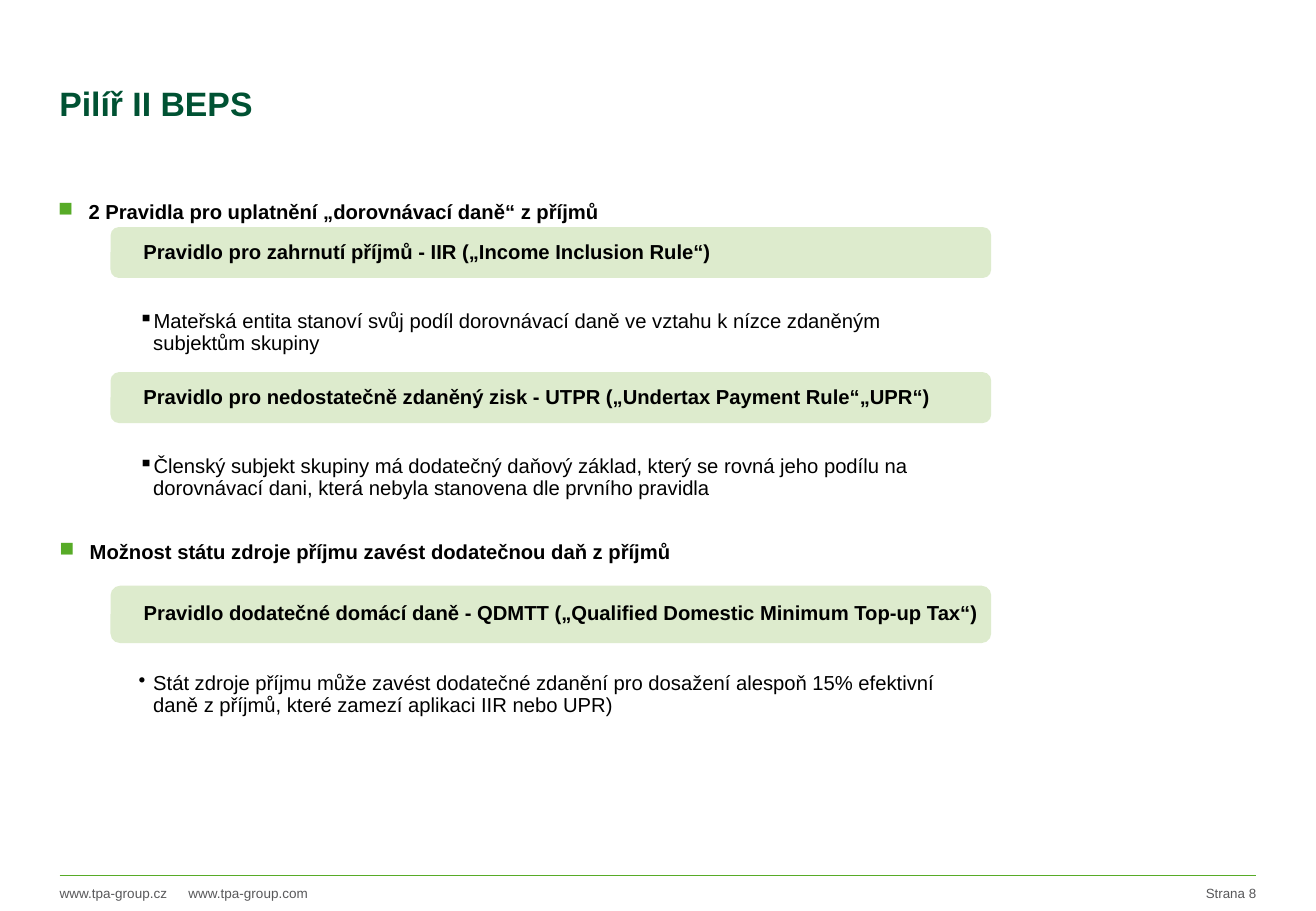
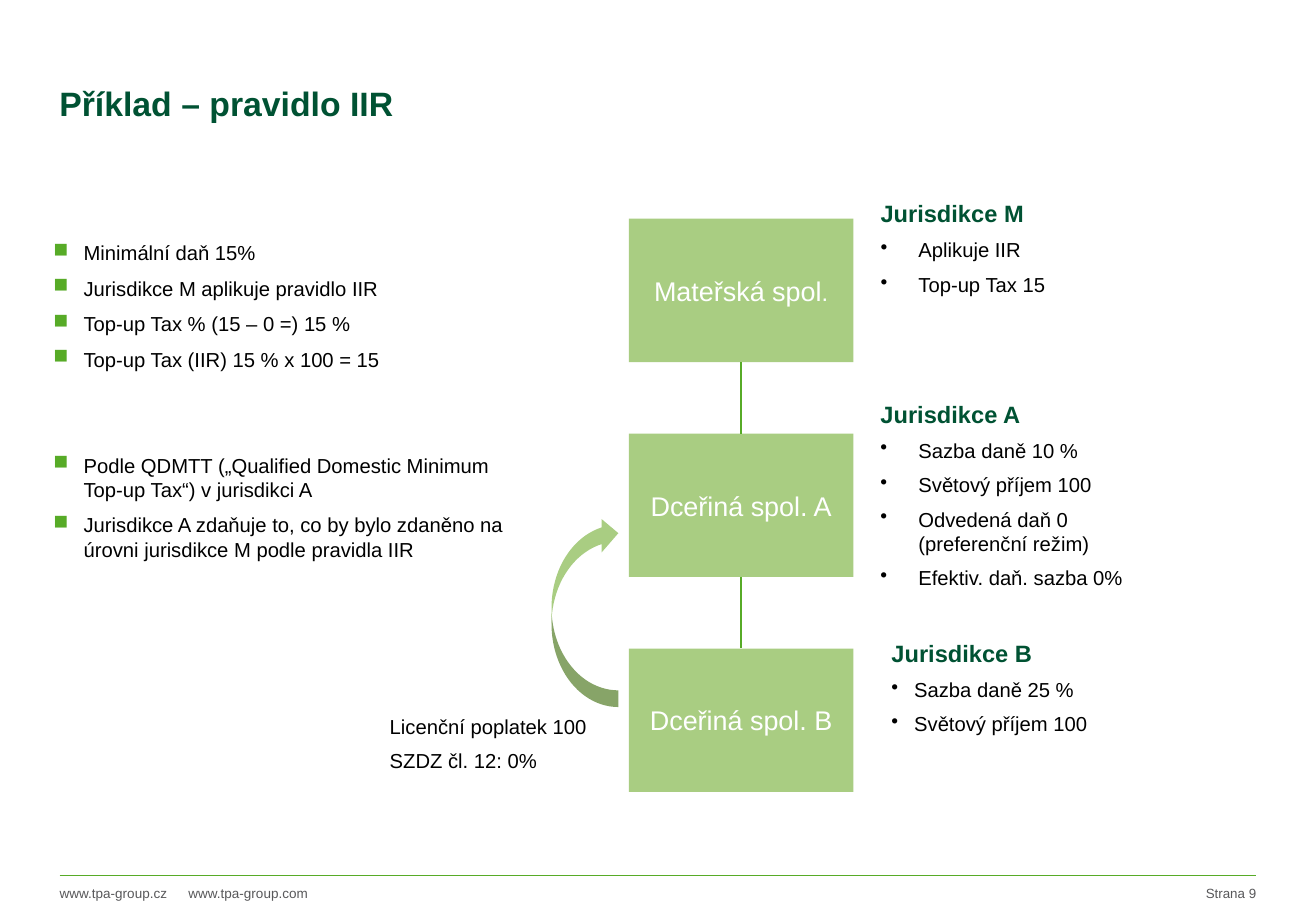
from dataclasses import dataclass, replace
from typing import Optional

from lxml import etree
from pptx import Presentation
from pptx.dml.color import RGBColor
from pptx.enum.shapes import MSO_CONNECTOR, MSO_SHAPE
from pptx.enum.text import MSO_ANCHOR, PP_ALIGN
from pptx.oxml.ns import qn
from pptx.util import Pt

TOP, MIDDLE = MSO_ANCHOR.TOP, MSO_ANCHOR.MIDDLE
LEFT, CENTER, RIGHT = PP_ALIGN.LEFT, PP_ALIGN.CENTER, PP_ALIGN.RIGHT
RECTANGLE, ROUNDED = MSO_SHAPE.RECTANGLE, MSO_SHAPE.ROUNDED_RECTANGLE
CURVED_ARROW = MSO_SHAPE.CURVED_DOWN_ARROW
STRAIGHT = MSO_CONNECTOR.STRAIGHT
BOTTOM_SIDE, TOP_SIDE = 2, 0

FONT = "Arial"
COLORS = {
    "dark": "005233", "green": "57AB27", "box": "A9CD82", "pale": "DDEBCD",
    "text": "000000", "footer": "58585A", "white": "FFFFFF",
}
NO_INSETS = (0, 0, 0, 0)
BOX_INSETS = (7.2, 3.6, 7.2, 3.6)


@dataclass(frozen=True)
class Look:
    size: float = 12
    color: str = "text"
    bold: bool = False
    align: PP_ALIGN = LEFT
    spacing: float = 1.0
    before: float = 0
    after: float = 0
    margin: float = 0
    hang: float = 0
    bullet: str = ""
    bullet_color: str = "text"


@dataclass(frozen=True)
class Para:
    text: str
    look: Look
    tail: str = ""
    tail_size: float = 14


@dataclass(frozen=True)
class Area:
    left: float
    top: float
    width: float
    height: float

    def lengths(self) -> tuple:
        return tuple(Pt(v) for v in (self.left, self.top, self.width, self.height))


@dataclass(frozen=True)
class Rule:
    top: float
    height: float
    name: str
    detail_top: float
    detail: str
    bullet: str


@dataclass(frozen=True)
class Jurisdiction:
    area: Area
    name: str
    hang: float
    facts: tuple


# Text styles
TITLE = Look(20, "dark", True, spacing=0.9)
FOOTER = Look(8, "footer")
POINT = Look(margin=18, hang=18, bullet="■", bullet_color="green")
NEXT_POINT = replace(POINT, before=6.6)
LATER_POINT = replace(POINT, before=48.5)
TOPIC = replace(POINT, bold=True)
RULE_NAME = Look(bold=True, spacing=0.9, margin=14.4)
RULE_DETAIL = Look(spacing=0.9, margin=8.7, hang=8.7)
COMPANY = Look(16, "white", align=CENTER)
HEADING = Look(14, "dark", True, after=6)
FACT = Look(after=6, bullet="•")
NOTE = Look(after=6)


def rgb(name: str) -> RGBColor:
    return RGBColor.from_string(COLORS[name])


def add_span(para, text: str, look: Look, size: float) -> None:
    span = para.add_run()
    span.text = text
    for key, value in {"name": FONT, "size": Pt(size), "bold": look.bold}.items():
        setattr(span.font, key, value)
    span.font.color.rgb = rgb(look.color)


def set_bullet(para, look: Look) -> None:
    props = para._p.get_or_add_pPr()
    props.set("marL", str(Pt(look.margin)))
    props.set("indent", str(-Pt(look.hang)))
    if look.bullet:
        tint = etree.SubElement(props, qn("a:buClr"))
        etree.SubElement(tint, qn("a:srgbClr")).set("val", COLORS[look.bullet_color])
        etree.SubElement(props, qn("a:buChar")).set("char", look.bullet)


def fill_text(box, paras: list, anchor: MSO_ANCHOR = TOP,
              insets: tuple = BOX_INSETS, wrap: bool = True) -> None:
    frame = box.text_frame
    left, top, right, bottom = (Pt(v) for v in insets)
    values = {"word_wrap": wrap, "vertical_anchor": anchor, "margin_left": left,
              "margin_top": top, "margin_right": right, "margin_bottom": bottom}
    for key, value in values.items():
        setattr(frame, key, value)
    for index, item in enumerate(paras):
        para = frame.add_paragraph() if index else frame.paragraphs[0]
        look = item.look
        values = {"alignment": look.align, "line_spacing": look.spacing,
                  "space_before": Pt(look.before), "space_after": Pt(look.after)}
        for key, value in values.items():
            setattr(para, key, value)
        set_bullet(para, look)
        add_span(para, item.text, look, look.size)
        if item.tail:
            add_span(para, item.tail, look, item.tail_size)


def add_text(page, area: Area, paras: list, anchor: MSO_ANCHOR = TOP,
             insets: tuple = BOX_INSETS, wrap: bool = True) -> None:
    fill_text(page.shapes.add_textbox(*area.lengths()), paras, anchor, insets, wrap)


def add_block(page, kind: MSO_SHAPE, area: Area, color: str):
    block = page.shapes.add_shape(kind, *area.lengths())
    block.shadow.inherit = False
    block.fill.solid()
    block.fill.fore_color.rgb = rgb(color)
    block.line.fill.background()
    return block


def add_line(page, start: tuple, end: tuple, width: float,
             upper: Optional[object] = None, lower: Optional[object] = None) -> None:
    line = page.shapes.add_connector(STRAIGHT, *(Pt(v) for v in start + end))
    line.line.color.rgb = rgb("green")
    line.line.width = Pt(width)
    etree.SubElement(line._element.spPr, qn("a:effectLst"))
    if upper is not None and lower is not None:
        line.begin_connect(upper, BOTTOM_SIDE)
        line.end_connect(lower, TOP_SIDE)


def add_page(deck, title: str, number: int):
    page = deck.slides.add_slide(deck.slide_layouts[6])
    # Footer rule, addresses and page number
    add_line(page, (35.3, 519.1), (744.5, 519.1), 0.5)
    for left, width, address in ((35.3, 65, "www.tpa-group.cz"),
                                 (111.6, 74, "www.tpa-group.com")):
        add_text(page, Area(left, 524.9, width, 9.4), [Para(address, FOOTER)],
                 MIDDLE, NO_INSETS, wrap=False)
    add_text(page, Area(576, 514.8, 175.7, 28.8),
             [Para(f"Strana {number}", replace(FOOTER, size=7.9, align=RIGHT))], MIDDLE)
    add_text(page, Area(28.1, 27.4, 620, 69.8), [Para(title, TITLE)], MIDDLE)
    return page


RULES = (
    Rule(134.6, 30.2, "Pravidlo pro zahrnutí příjmů - IIR („Income Inclusion Rule“)", 182.8,
         "Mateřská entita stanoví svůj podíl dorovnávací daně ve vztahu k nízce "
         "zdaněným subjektům skupiny", "▪"),
    Rule(220.6, 30.2,
         "Pravidlo pro nedostatečně zdaněný zisk - UTPR („Undertax Payment Rule“„UPR“)", 268.8,
         "Členský subjekt skupiny má dodatečný daňový základ, který se rovná jeho podílu "
         "na dorovnávací dani, která nebyla stanovena dle prvního pravidla", "▪"),
    Rule(347.2, 34,
         "Pravidlo dodatečné domácí daně - QDMTT („Qualified Domestic Minimum Top-up Tax“)",
         397.4,
         "Stát zdroje příjmu může zavést dodatečné zdanění pro dosažení alespoň 15% "
         "efektivní daně z příjmů, které zamezí aplikaci IIR nebo UPR)", "•"),
)

JURISDICTIONS = (
    Jurisdiction(Area(514.8, 114.5, 131, 114.5), "Jurisdikce M", 22.5,
                 ("Aplikuje IIR", "Top-up Tax 15")),
    Jurisdiction(Area(514.8, 233.3, 188, 125.3), "Jurisdikce A", 22.5,
                 ("Sazba daně 10 %", "Světový příjem 100",
                  "Odvedená daň 0 (preferenční režim)", "Efektiv. daň. sazba 0%")),
    Jurisdiction(Area(521.3, 375.1, 175.7, 105.1), "Jurisdikce B", 13.5,
                 ("Sazba daně 25 %", "Světový příjem 100")),
)


def build_rules(deck) -> None:
    page = add_page(deck, "Pilíř II BEPS", 8)
    # Topics
    add_text(page, Area(27.4, 114.5, 709, 30),
             [Para("2 Pravidla pro uplatnění „dorovnávací daně“ z příjmů", TOPIC)])
    add_text(page, Area(28.1, 316.1, 580, 30),
             [Para("Možnost státu zdroje příjmu zavést dodatečnou daň z příjmů", TOPIC)])
    # Rule bars with their explanations
    left, width = 65.5, 522
    for rule in RULES:
        bar = add_block(page, ROUNDED, Area(left, rule.top, width, rule.height), "pale")
        fill_text(bar, [Para(rule.name, RULE_NAME)], MIDDLE, (3.6, 3.6, 3.6, 3.6))
        add_text(page, Area(left, rule.detail_top, width, 38),
                 [Para(rule.detail, replace(RULE_DETAIL, bullet=rule.bullet))],
                 insets=(16.6, 1.5, 8, 1.5))


def build_example(deck) -> None:
    page = add_page(deck, "Příklad – pravidlo IIR", 9)
    # Assumptions
    add_text(page, Area(24.5, 139, 281, 362), [
        Para("Minimální daň 15%", POINT),
        Para("Jurisdikce M aplikuje pravidlo IIR", NEXT_POINT),
        Para("Top-up Tax % (15 – 0 =) 15 %", NEXT_POINT),
        Para("Top-up Tax (IIR) 15 % x 100 = 15", NEXT_POINT),
        Para("Podle QDMTT („Qualified Domestic Minimum Top-up Tax“) v jurisdikci A",
             LATER_POINT),
        Para("Jurisdikce A zdaňuje to, co by bylo zdaněno na úrovni jurisdikce M "
             "podle pravidla IIR", NEXT_POINT),
    ])
    # Jurisdictions
    for place in JURISDICTIONS:
        fact = replace(FACT, margin=place.hang, hang=place.hang)
        add_text(page, place.area, [Para(place.name, HEADING)]
                 + [Para(text, fact) for text in place.facts])
    # Ownership chain
    companies = (Para("Mateřská spol", COMPANY, tail="."),
                 Para("Dceřiná spol. A", COMPANY), Para("Dceřiná spol. B", COMPANY))
    boxes = []
    for index, company in enumerate(companies):
        area = Area(372.7, 129.6 + index * 127.4, 133.2, 85)
        box = add_block(page, RECTANGLE, area, "box")
        fill_text(box, [company], MIDDLE)
        boxes.append(box)
    for upper, lower in zip(boxes, boxes[1:]):
        add_line(page, (0, 0), (0, 0), 1, upper, lower)
    # Licence fee
    arrow = add_block(page, CURVED_ARROW, Area(290.2, 342.8, 113, 39.6), "box")
    arrow.rotation = 270
    add_text(page, Area(223.9, 419.8, 133.2, 69.8),
             [Para("Licenční poplatek 100", NOTE), Para("SZDZ čl. 12: 0%", NOTE)])


def main() -> None:
    deck = Presentation()
    deck.slide_width, deck.slide_height = Pt(780), Pt(540)
    build_rules(deck)
    build_example(deck)
    deck.save("out.pptx")


if __name__ == "__main__":
    main()
